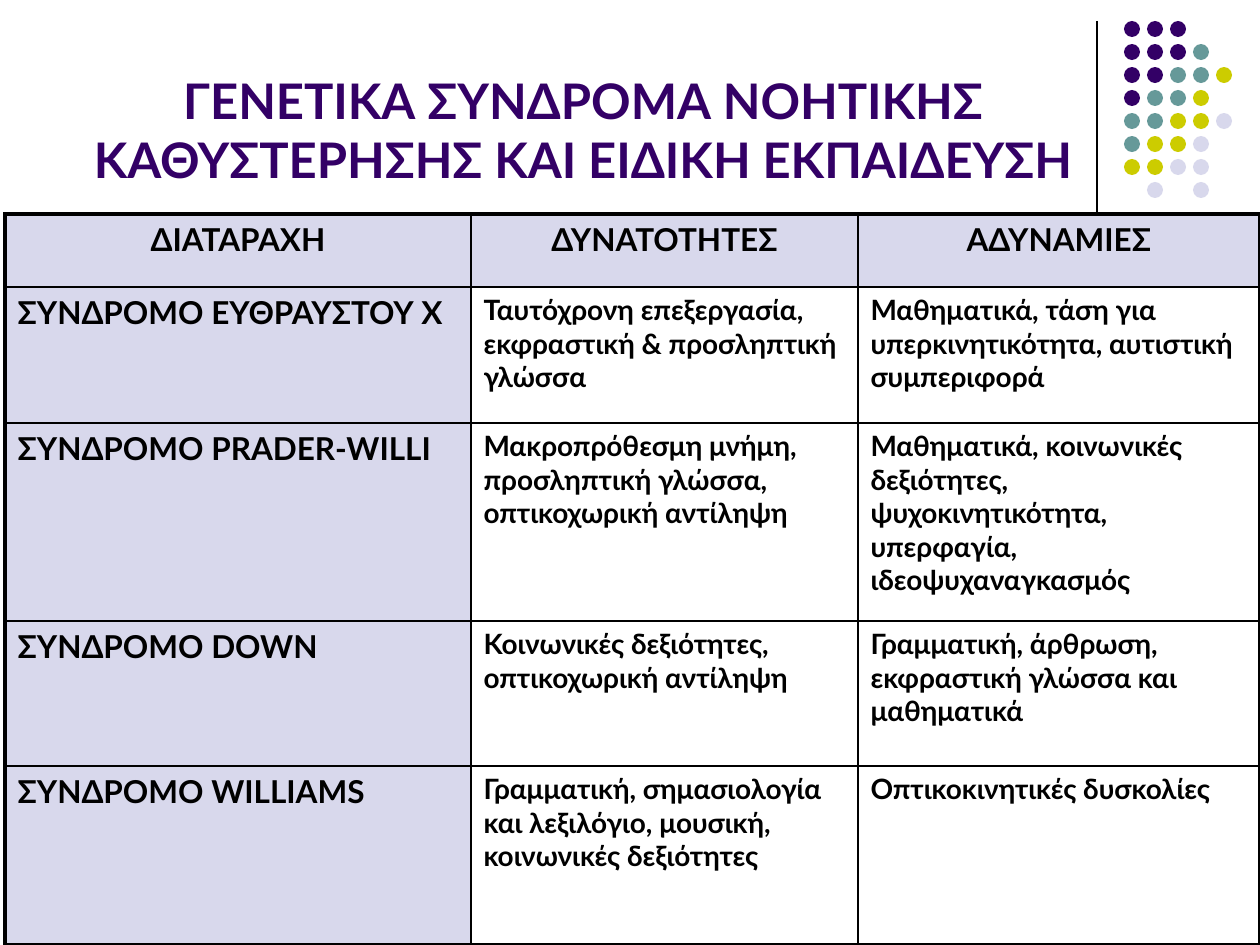
"""Build a slide on genetic syndromes of intellectual disability and their learning profiles."""
import pptx
import pptx.dml.color
import pptx.enum.shapes
import pptx.enum.text
import pptx.oxml.ns
import pptx.util
from lxml import etree

PX = 914400 / 126
FONT = "Lato"
BLACK = pptx.dml.color.RGBColor(0x00, 0x00, 0x00)
PURPLE = pptx.dml.color.RGBColor(0x33, 0x00, 0x66)
TEAL = pptx.dml.color.RGBColor(0x66, 0x99, 0x99)
OLIVE = pptx.dml.color.RGBColor(0xCC, 0xCC, 0x00)
LAVENDER = pptx.dml.color.RGBColor(0xD8, 0xD8, 0xEC)


def px(*lengths):
    return [pptx.util.Emu(round(length * PX)) for length in lengths]


def add_border(cell, side, points):
    properties = cell._tc.get_or_add_tcPr()
    edge = etree.SubElement(properties, pptx.oxml.ns.qn(f"a:ln{side}"), w=str(pptx.util.Pt(points)))
    paint = etree.SubElement(edge, pptx.oxml.ns.qn("a:solidFill"))
    etree.SubElement(paint, pptx.oxml.ns.qn("a:srgbClr"), val=str(BLACK))


presentation = pptx.Presentation()
presentation.slide_width, presentation.slide_height = px(1260, 945)
slide = presentation.slides.add_slide(presentation.slide_layouts[5])

heading = slide.shapes.title
heading.left, heading.top, heading.width, heading.height = px(63, 16, 1040, 179)
heading.text_frame.text = "ΓΕΝΕΤΙΚΑ ΣΥΝΔΡΟΜΑ ΝΟΗΤΙΚΗΣ ΚΑΘΥΣΤΕΡΗΣΗΣ ΚΑΙ ΕΙΔΙΚΗ ΕΚΠΑΙΔΕΥΣΗ"
heading.text_frame.auto_size = pptx.enum.text.MSO_AUTO_SIZE.NONE
heading.text_frame.word_wrap = True
heading.text_frame.vertical_anchor = pptx.enum.text.MSO_ANCHOR.BOTTOM
heading_line = heading.text_frame.paragraphs[0]
heading_line.alignment = pptx.enum.text.PP_ALIGN.CENTER
heading_line.font.name = FONT
heading_line.font.size = pptx.util.Pt(28)
heading_line.font.bold = True
heading_line.font.color.rgb = PURPLE

divider = slide.shapes.add_connector(
    pptx.enum.shapes.MSO_CONNECTOR.STRAIGHT, *px(1097, 21, 1097, 231)
)
divider.line.color.rgb = BLACK
divider.line.width = pptx.util.Pt(0.75)
etree.SubElement(divider._element.spPr, pptx.oxml.ns.qn("a:effectLst"))

DOT_COLORS = {"P": PURPLE, "T": TEAL, "O": OLIVE, "L": LAVENDER}
DOT_ROWS = ["PPP", "PPPT", "PPTTO", "PTTO", "TTOOL", "TOOL", "OOLL", ".L.L"]
DOT_PITCH = 23
for row, letters in enumerate(DOT_ROWS):
    for column, letter in enumerate(letters):
        if letter not in DOT_COLORS:
            continue
        dot = slide.shapes.add_shape(
            pptx.enum.shapes.MSO_SHAPE.OVAL,
            *px(1124 + column * DOT_PITCH, 21 + row * DOT_PITCH, 16, 16),
        )
        dot.shadow.inherit = False
        dot.fill.solid()
        dot.fill.fore_color.rgb = DOT_COLORS[letter]
        dot.line.fill.background()

PROFILES = [
    ["ΔΙΑΤΑΡΑΧΗ", "ΔΥΝΑΤΟΤΗΤΕΣ", "ΑΔΥΝΑΜΙΕΣ"],
    ["ΣΥΝΔΡΟΜΟ ΕΥΘΡΑΥΣΤΟΥ Χ",
     "Ταυτόχρονη επεξεργασία, εκφραστική & προσληπτική γλώσσα",
     "Μαθηματικά, τάση για υπερκινητικότητα, αυτιστική συμπεριφορά"],
    ["ΣΥΝΔΡΟΜΟ PRADER-WILLI",
     "Μακροπρόθεσμη μνήμη, προσληπτική γλώσσα, οπτικοχωρική αντίληψη",
     "Μαθηματικά, κοινωνικές δεξιότητες, ψυχοκινητικότητα, υπερφαγία, ιδεοψυχαναγκασμός"],
    ["ΣΥΝΔΡΟΜΟ DOWN",
     "Κοινωνικές δεξιότητες, οπτικοχωρική αντίληψη",
     "Γραμματική, άρθρωση, εκφραστική γλώσσα και μαθηματικά"],
    ["ΣΥΝΔΡΟΜΟ WILLIAMS",
     "Γραμματική, σημασιολογία και λεξιλόγιο, μουσική, κοινωνικές δεξιότητες",
     "Οπτικοκινητικές δυσκολίες"],
]
COLUMN_WIDTHS = [466, 387, 402]
ROW_HEIGHTS = [73, 136, 198, 145, 179]
LAST_ROW = len(ROW_HEIGHTS) - 1
LAST_COLUMN = len(COLUMN_WIDTHS) - 1

profiles = slide.shapes.add_table(
    len(ROW_HEIGHTS), len(COLUMN_WIDTHS),
    *px(5, 214, sum(COLUMN_WIDTHS), sum(ROW_HEIGHTS)),
).table
profiles.first_row = False
profiles.horz_banding = False
for column, width in zip(profiles.columns, px(*COLUMN_WIDTHS)):
    column.width = width
for row, height in zip(profiles.rows, px(*ROW_HEIGHTS)):
    row.height = height

for row, texts in enumerate(PROFILES):
    for column, text in enumerate(texts):
        cell = profiles.cell(row, column)
        cell.text = text
        is_label = row == 0 or column == 0
        outer_sides = {
            "L": column == 0,
            "R": column == LAST_COLUMN,
            "T": row == 0,
            "B": row == LAST_ROW,
        }
        for side, is_outer in outer_sides.items():
            add_border(cell, side, 2.25 if is_outer else 1)
        if is_label:
            cell.fill.solid()
            cell.fill.fore_color.rgb = LAVENDER
        else:
            cell.fill.background()
        entry = cell.text_frame.paragraphs[0]
        entry.alignment = (
            pptx.enum.text.PP_ALIGN.CENTER if row == 0 else pptx.enum.text.PP_ALIGN.LEFT
        )
        entry.font.name = FONT
        entry.font.size = pptx.util.Pt(18 if is_label else 16)
        entry.font.bold = True
        entry.font.color.rgb = BLACK

presentation.save("out.pptx")
